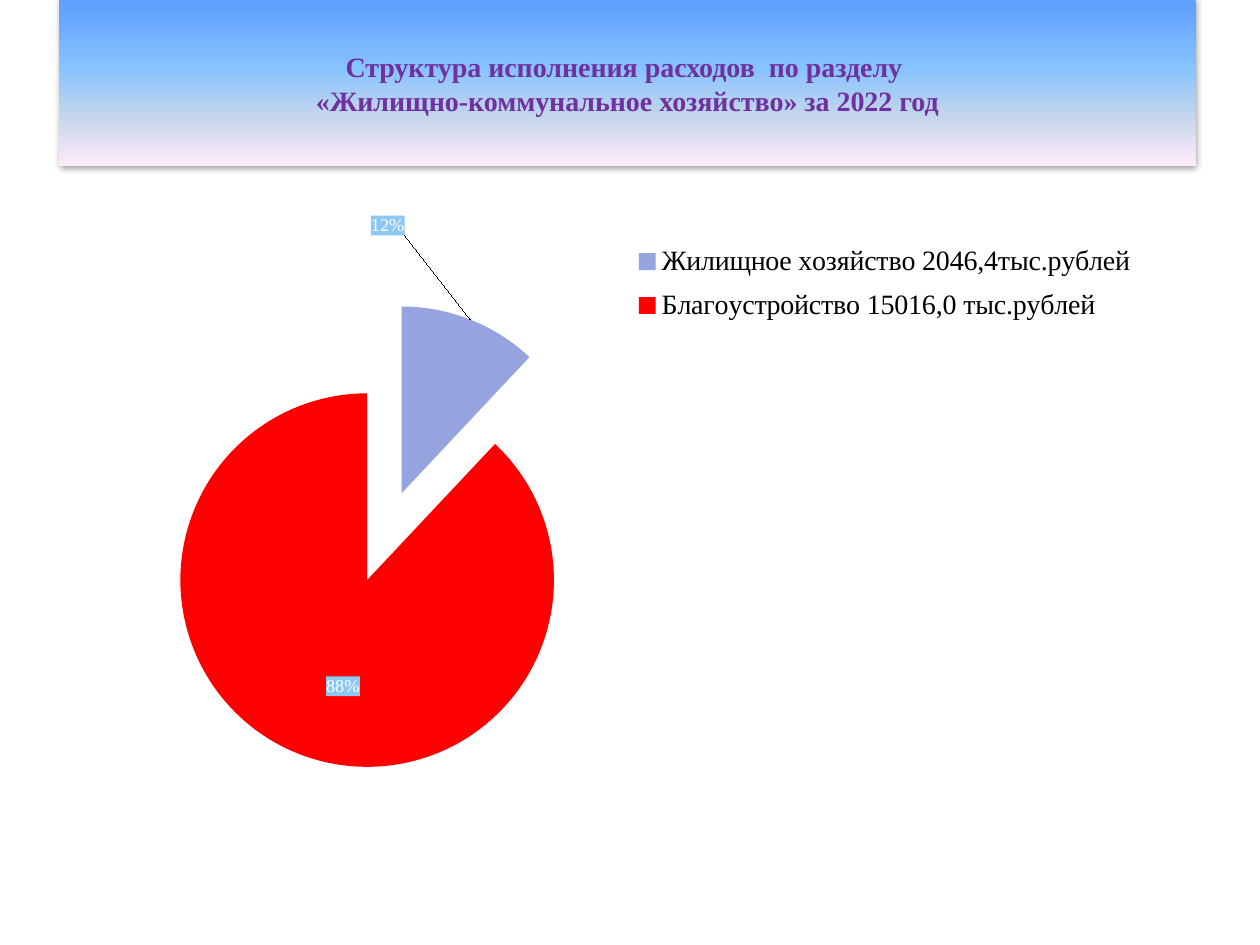
from lxml.etree import SubElement
from pptx import Presentation
from pptx.chart.data import CategoryChartData
from pptx.dml.color import RGBColor
from pptx.enum.chart import XL_CHART_TYPE, XL_LEGEND_POSITION
from pptx.enum.shapes import MSO_SHAPE
from pptx.enum.text import MSO_ANCHOR, PP_ALIGN
from pptx.oxml import parse_xml
from pptx.oxml.ns import nsdecls, qn
from pptx.util import Inches, Pt

SERIF = "Times New Roman"
TITLE = [
    "Структура исполнения расходов  по разделу ",
    "«Жилищно-коммунальное хозяйство» за 2022 год",
]
# Category, share in percent, slice colour, label shift in fractions of the chart
EXPENSES = [
    ("Жилищное хозяйство 2046,4тыс.рублей", 12, "95A4DE", (-0.1, -0.12), "outEnd"),
    ("Благоустройство 15016,0 тыс.рублей", 88, "FF0000", (0.01, 0.03), "ctr"),
]


def color(value):
    return RGBColor.from_string(value)


def style_font(font, size, fill, name=SERIF, bold=False):
    font.name, font.size, font.bold = name, Pt(size), bold
    font.color.rgb = color(fill)


def write_text(frame, lines, align=PP_ALIGN.CENTER, anchor=MSO_ANCHOR.MIDDLE, **font):
    frame.word_wrap = True
    frame.vertical_anchor = anchor
    for index, line in enumerate(lines):
        paragraph = frame.paragraphs[0] if index == 0 else frame.add_paragraph()
        paragraph.alignment = align
        run = paragraph.add_run()
        run.text = line
        style_font(run.font, **font)


def set_gradient(shape, stops):
    shape.fill.gradient()
    shape.fill.gradient_angle = 270
    stop_list = shape._element.spPr.find(".//" + qn("a:gsLst"))
    for stop in list(stop_list):
        stop_list.remove(stop)
    for percent, value in stops:
        stop = SubElement(stop_list, qn("a:gs"), pos=str(percent * 1000))
        SubElement(stop, qn("a:srgbClr"), val=value)


def add_shadow(shape, value, opacity, blur):
    shape.shadow.inherit = False
    effects = shape._element.spPr.find(qn("a:effectLst"))
    shadow = SubElement(effects, qn("a:outerShdw"), blurRad=str(Pt(blur)),
                        dist="0", dir="5400000", rotWithShape="0")
    tint = SubElement(shadow, qn("a:srgbClr"), val=value)
    SubElement(tint, qn("a:alpha"), val=str(opacity * 1000))


def layout_xml(x, y, w=None, h=None, inner=False):
    """Manual chart layout; without a size it is a shift from the default place."""
    target = '<c:layoutTarget val="inner"/>' if inner else ""
    modes = '<c:xMode val="edge"/><c:yMode val="edge"/>' if w else ""
    size = f'<c:w val="{w}"/><c:h val="{h}"/>' if w else ""
    return (f'<c:layout {nsdecls("c")}><c:manualLayout>{target}{modes}'
            f'<c:x val="{x}"/><c:y val="{y}"/>{size}</c:manualLayout></c:layout>')


def set_layout(element, after, xml):
    old = element.find(qn("c:layout"))
    if old is not None:
        element.remove(old)
    position = 0 if after is None else element.index(element.find(qn(after))) + 1
    element.insert(position, parse_xml(xml))


def labels_xml():
    """Percent labels on a light blue ground, each with its own shift."""
    look = ('<c:spPr><a:solidFill><a:srgbClr val="8DC8F5"/></a:solidFill></c:spPr>'
            '<c:txPr><a:bodyPr/><a:p><a:pPr><a:defRPr sz="1040" b="0"><a:solidFill>'
            f'<a:srgbClr val="FFFFFF"/></a:solidFill><a:latin typeface="{SERIF}"/>'
            '</a:defRPr></a:pPr><a:endParaRPr lang="ru-RU"/></a:p></c:txPr>')
    flags = "".join(
        f'<c:show{part} val="{int(part == "Percent")}"/>'
        for part in ("LegendKey", "Val", "CatName", "SerName", "Percent", "BubbleSize"))
    number = '<c:numFmt formatCode="0%" sourceLinked="0"/>'
    points = "".join(
        f'<c:dLbl><c:idx val="{index}"/>{layout_xml(*shift)}{number}{look}'
        f'<c:dLblPos val="{place}"/>{flags}</c:dLbl>'
        for index, (_, _, _, shift, place) in enumerate(EXPENSES))
    return (f'<c:dLbls {nsdecls("c", "a")}>{points}{number}{look}{flags}'
            '<c:showLeaderLines val="1"/></c:dLbls>')


def add_title_band(slide, left, top, width, height):
    band = slide.shapes.add_shape(MSO_SHAPE.RECTANGLE, left, top, width, height)
    set_gradient(band, [(0, "5E9EFF"), (40, "85C2FF"), (70, "C4D6EB"), (100, "FFEBFA")])
    band.line.fill.background()
    add_shadow(band, "000000", opacity=43, blur=4)
    write_text(band.text_frame, TITLE, size=16, fill="7030A0", bold=True)


def add_expense_pie(slide, left, top, width, height):
    data = CategoryChartData()
    data.categories = [expense[0] for expense in EXPENSES]
    data.add_series("Series 1", [expense[1] for expense in EXPENSES])
    chart = slide.shapes.add_chart(XL_CHART_TYPE.PIE, left, top, width, height, data).chart
    style_font(chart.font, 11.7, "000000", name="Calibri")
    chart.has_title = False

    # Slices
    plot = chart.plots[0]
    plot.vary_by_categories = True
    shares = plot.series[0]
    for index, expense in enumerate(EXPENSES):
        slice_fill = shares.points[index].format.fill
        slice_fill.solid()
        slice_fill.fore_color.rgb = color(expense[2])
    series = shares._element
    first_point = series.find(qn("c:dPt"))
    first_point.addprevious(parse_xml(f'<c:explosion {nsdecls("c")} val="25"/>'))
    series.find(qn("c:cat")).addprevious(parse_xml(labels_xml()))
    plot_area = chart._chartSpace.chart.plotArea
    set_layout(plot_area, None, layout_xml(0.017, 0.138, 0.457, 0.724, inner=True))

    # Legend
    chart.has_legend = True
    legend = chart.legend
    legend.position = XL_LEGEND_POSITION.RIGHT
    legend.include_in_layout = False
    style_font(legend.font, 16, "000000")
    set_layout(legend._element, "c:legendPos", layout_xml(0.48, 0.03, 0.51, 0.155))


def main():
    deck = Presentation()
    deck.slide_width, deck.slide_height = Inches(10), Inches(7.5)
    slide = deck.slides.add_slide(deck.slide_layouts[6])
    add_expense_pie(slide, Inches(1.06), Inches(1.7), Inches(8.11), Inches(5.12))
    add_title_band(slide, Inches(0.47), Inches(0), Inches(9.02), Inches(1.32))
    deck.save("out.pptx")


if __name__ == "__main__":
    main()
